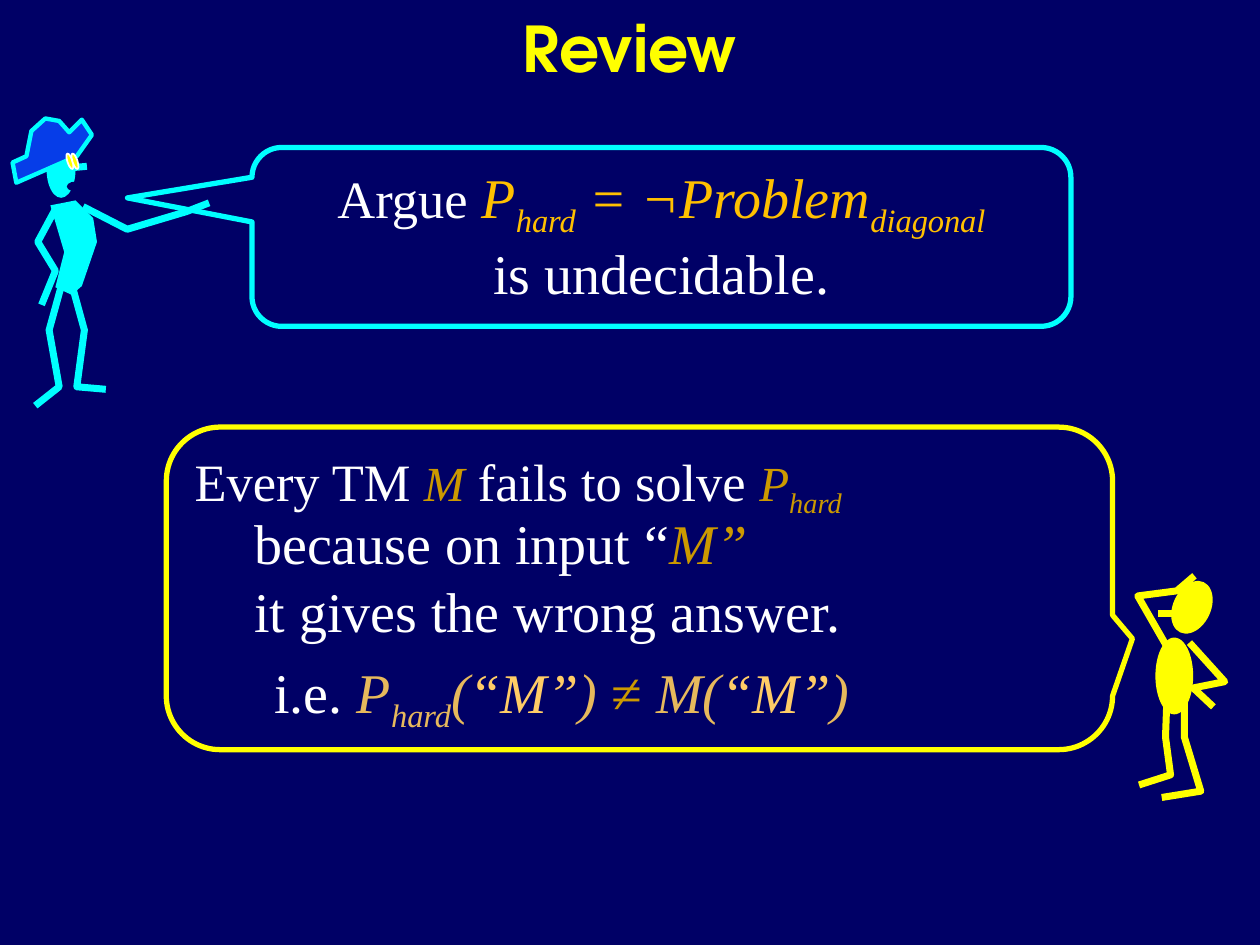
import pptx
import pptx.util
import pptx.dml.color
import pptx.enum.shapes
import pptx.enum.text

RGBColor = pptx.dml.color.RGBColor
MSO_SHAPE = pptx.enum.shapes.MSO_SHAPE
PP_ALIGN = pptx.enum.text.PP_ALIGN
MSO_ANCHOR = pptx.enum.text.MSO_ANCHOR
Inches, Pt = pptx.util.Inches, pptx.util.Pt

NAVY = RGBColor(0x00, 0x00, 0x66)
YELLOW = RGBColor(0xFF, 0xFF, 0x00)
CYAN = RGBColor(0x00, 0xFF, 0xFF)
BLUE = RGBColor(0x06, 0x3D, 0xE8)
WHITE = RGBColor(0xFF, 0xFF, 0xFF)
AMBER = RGBColor(0xFF, 0xC0, 0x00)
OCHRE = RGBColor(0xCC, 0x99, 0x00)
SAND = RGBColor(0xE7, 0xB9, 0x5C)
PEACH = RGBColor(0xFF, 0xCC, 0x66)

HEADING_FONT, BODY_FONT = "TeX Gyre Adventor", "Times New Roman"
UNIT = Inches(0.01)  # outlines are in hundredths of an inch
LIMB_WIDTH = 4

# A run is text, size, colour, style: b bold, i italic, s subscript.
# A paragraph is a list of runs; BREAK starts a new line inside it.
BREAK = None
TITLE = [[("Review", 36, YELLOW, "b")]]
CLAIM = [
    [("Argue", 30, WHITE, ""), (" ", 32, SAND, "i"), ("P", 32, AMBER, "i"),
     ("hard", 32, AMBER, "is"), (" = ¬Problem", 32, AMBER, "i"),
     ("diagonal", 32, AMBER, "is")],
    [("is undecidable.", 32, WHITE, "")],
]
REASON = [[("Every TM ", 30, WHITE, ""), ("M", 28, OCHRE, "i"),
           (" fails to solve ", 30, WHITE, ""), ("P", 28, OCHRE, "i"),
           ("hard", 28, OCHRE, "is")]]
WRONG_ANSWER = [[("because on input “", 32, WHITE, ""), ("M”", 32, OCHRE, "i"), BREAK,
                 ("it gives the wrong answer.", 32, WHITE, "")]]
FORMULA = [[("i.e. ", 32, WHITE, ""), ("P", 32, SAND, "i"), ("hard", 32, SAND, "is"),
            ("(", 32, SAND, "i"), ("“M”", 32, PEACH, "i"), (") ", 32, SAND, "i"),
            ("≠ ", 32, OCHRE, ""), ("M(", 32, SAND, "i"), ("“M”", 32, PEACH, "i"),
            (")", 32, SAND, "i")]]

# Limbs are centre lines drawn with a thick pen.
THINKER_LIMBS = [
    [(919, 487), (931, 487)],
    [(944, 510), (972, 541), (947, 546), (963, 561)],
    [(940, 556), (940, 585), (953, 628), (922, 633)],
    [(926, 558), (925, 585), (929, 615), (904, 623)],
    [(926, 513), (903, 473), (934, 469), (948, 457)],
]
SPEAKER_LIMBS = [
    [(58, 133), (69, 132)],
    [(66, 164), (101, 182), (148, 168), (166, 161)],
    [(44, 166), (30, 192), (44, 215), (33, 242)],
    [(50, 222), (39, 262), (47, 307), (28, 322)],
    [(56, 222), (67, 262), (61, 307), (84, 309)],
]
SPEAKER_BODY = [(40, 163), (60, 159), (74, 173), (77, 192), (65, 227), (57, 234),
                (44, 228), (51, 200)]
HAT = [(10, 129), (21, 124), (25, 104), (36, 94), (47, 96), (55, 105), (65, 95),
       (73, 107), (61, 124), (13, 145)]
# box, rotation, fill
THINKER_OVALS = [((9.31, 4.6, 0.3, 0.44), 25, YELLOW), ((9.17, 5.06, 0.3, 0.61), 0, YELLOW)]
SPEAKER_OVALS = [((0.37, 1.12, 0.23, 0.45), 0, CYAN), ((0.53, 1.44, 0.15, 0.08), 0, NAVY)]
EYE_LEFTS = (0.49, 0.53)


def write(shape, paragraphs, font_name=BODY_FONT, align=PP_ALIGN.LEFT,
          anchor=MSO_ANCHOR.TOP, wrap=True):
    text_frame = shape.text_frame
    text_frame.word_wrap = wrap
    text_frame.vertical_anchor = anchor
    for index, runs in enumerate(paragraphs):
        paragraph = text_frame.add_paragraph() if index else text_frame.paragraphs[0]
        paragraph.alignment = align
        for item in runs:
            if item is BREAK:
                paragraph.add_line_break()
                continue
            run = paragraph.add_run()
            run.text, size, color, style = item
            run.font.name, run.font.size = font_name, Pt(size)
            run.font.color.rgb = color
            run.font.bold, run.font.italic = "b" in style, "i" in style
            if "s" in style:
                run.font._element.set("baseline", "-25000")


def add_text(slide, box, paragraphs, **layout):
    write(slide.shapes.add_textbox(*map(Inches, box)), paragraphs, **layout)


def paint(shape, fill=None, line=None, width=0):
    shape.shadow.inherit = False
    if fill is None:
        shape.fill.background()
    else:
        shape.fill.solid()
        shape.fill.fore_color.rgb = fill
    if line is None:
        shape.line.fill.background()
    else:
        shape.line.color.rgb, shape.line.width = line, Pt(width)


def add_callout(slide, box, tip, color, paragraphs, align):
    shape = slide.shapes.add_shape(MSO_SHAPE.ROUNDED_RECTANGULAR_CALLOUT, *map(Inches, box))
    for index, value in enumerate((*tip, 0.167)):
        shape.adjustments[index] = value
    paint(shape, line=color, width=3)
    write(shape, paragraphs, align=align)


def add_outline(group, points, close, *colors):
    builder = group.shapes.build_freeform(*points[0], scale=UNIT)
    builder.add_line_segments(points[1:], close=close)
    paint(builder.convert_to_shape(), *colors)


def add_oval(group, box, rotation, *colors):
    oval = group.shapes.add_shape(MSO_SHAPE.OVAL, *map(Inches, box))
    oval.rotation = rotation
    paint(oval, *colors)


def add_figure(slide, limbs, ovals, color):
    group = slide.shapes.add_group_shape()
    for limb in limbs:
        add_outline(group, limb, False, None, color, LIMB_WIDTH)
    for oval in ovals:
        add_oval(group, *oval)
    return group


presentation = pptx.Presentation()
presentation.slide_width, presentation.slide_height = Inches(10), Inches(7.5)
slide = presentation.slides.add_slide(presentation.slide_layouts[6])
slide.background.fill.solid()
slide.background.fill.fore_color.rgb = NAVY

add_text(slide, (0.75, -0.25, 8.5, 1.25), TITLE, font_name=HEADING_FONT,
         align=PP_ALIGN.CENTER, anchor=MSO_ANCHOR.MIDDLE)
add_callout(slide, (2, 1.17, 6.5, 1.42), (-0.652, -0.218), CYAN, CLAIM, PP_ALIGN.CENTER)
add_figure(slide, THINKER_LIMBS, THINKER_OVALS, YELLOW)
add_callout(slide, (1.32, 3.39, 7.51, 2.56), (0.521, 0.156), YELLOW, REASON, PP_ALIGN.LEFT)

speaker = add_figure(slide, SPEAKER_LIMBS, SPEAKER_OVALS, CYAN)
add_outline(speaker, SPEAKER_BODY, True, CYAN)
add_outline(speaker, HAT, True, BLUE, CYAN, 2.5)
for left in EYE_LEFTS:
    add_oval(speaker, (left, 1.26, 0.13, 0.04), 71.4, YELLOW, WHITE, 1)

add_text(slide, (1.92, 3.99, 4.9, 1.18), WRONG_ANSWER, wrap=False)
add_text(slide, (2.08, 5.17, 5, 0.64), FORMULA)

presentation.save("out.pptx")
